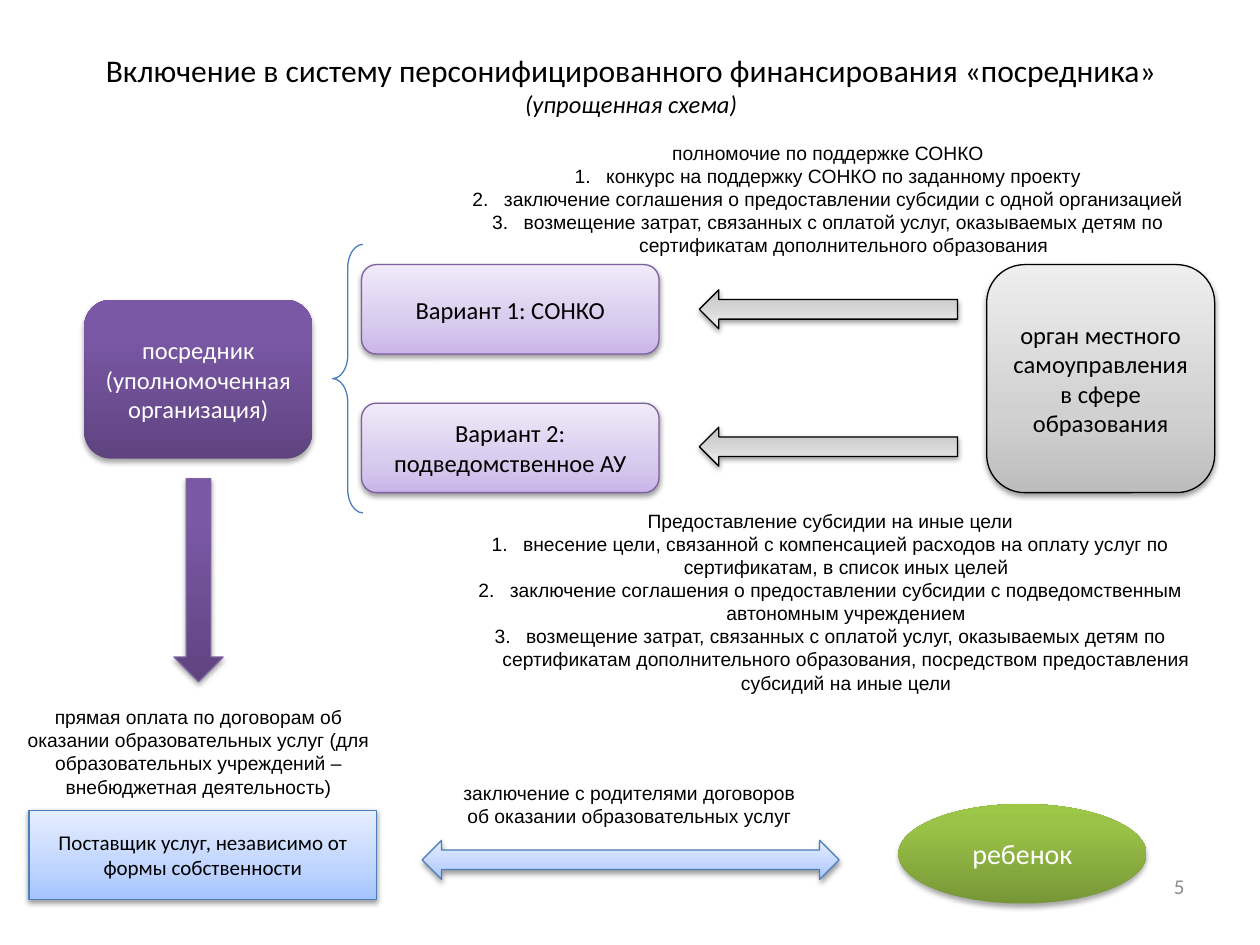
from dataclasses import dataclass
from typing import NamedTuple, Optional

from lxml import etree
from pptx import Presentation
from pptx import util as u
from pptx.dml.color import RGBColor
from pptx.enum import shapes, text
from pptx.oxml.ns import qn

Pt = u.Pt
Kind = shapes.MSO_SHAPE
Align = text.PP_ALIGN
Anchor = text.MSO_ANCHOR


class Shadow(NamedTuple):
    alpha: int
    blur: float
    distance: float


class Style(NamedTuple):
    stops: tuple  # (position %, colour), from bottom to top
    line: Optional[str]
    shadow: Shadow
    ink: str


# Theme: colours, fonts and type sizes
SOFT, STRONG = Shadow(38, 3.1, 1.6), Shadow(35, 3.1, 1.8)


@dataclass(frozen=True)
class Theme:
    head_font: str = "Calibri"
    note_font: str = "Arial"
    black: str = "000000"
    muted: str = "8C8C8C"
    blue_line: str = "4B7EBC"
    title: int = 18
    child: int = 16
    label: int = 14
    small: int = 12
    note: int = 11
    hairline: float = 0.75
    purple: Style = Style(((0, "5F4480"), (80, "7B58A6"), (100, "7C57A8")), None, STRONG, "FFFFFF")
    green: Style = Style(((0, "779737"), (80, "9BC348"), (100, "9DC746")), None, STRONG, "FFFFFF")
    lilac: Style = Style(((0, "C9B5E8"), (35, "D8CBEE"), (100, "F0EAF9")), "7D60A0", SOFT, "000000")
    grey: Style = Style(((0, "BDBDBD"), (35, "D1D1D1"), (100, "EEEEEE")), "000000", SOFT, "000000")
    blue: Style = Style(((0, "A4C4FF"), (35, "BFD4FF"), (100, "E6EEFF")), "4B7EBC", SOFT, "000000")


T = Theme()


class Box(NamedTuple):
    left: float
    top: float
    width: float
    height: float


class Node(NamedTuple):
    kind: Kind
    box: Box
    style: Style
    label: str = ""
    size: int = T.label
    rotation: int = 0


class Note(NamedTuple):
    box: Box
    heading: str
    steps: tuple = ()


def add_run(p, words: str, size: int, font: str, color: str, italic: bool = False) -> None:
    r = p.add_run()
    r.text = words
    r.font.size, r.font.name, r.font.italic = Pt(size), font, italic
    r.font.color.rgb = RGBColor.from_string(color)


def add_color(parent, color: str):
    return etree.SubElement(parent, qn("a:srgbClr"), val=color)


def set_gradient(s, stops: tuple) -> None:
    s.fill.gradient()
    s.fill.gradient_angle = 90
    stop_list = s._element.spPr.find(".//" + qn("a:gsLst"))
    for old in list(stop_list):
        stop_list.remove(old)
    for position, color in stops:
        add_color(etree.SubElement(stop_list, qn("a:gs"), pos=str(position * 1000)), color)


def set_shadow(s, shadow: Shadow) -> None:
    s.shadow.inherit = False
    effects = s._element.spPr.find(qn("a:effectLst"))
    outer = etree.SubElement(effects, qn("a:outerShdw"), blurRad=str(Pt(shadow.blur)),
                             dist=str(Pt(shadow.distance)), dir="5400000", rotWithShape="0")
    etree.SubElement(add_color(outer, T.black), qn("a:alpha"), val=str(shadow.alpha * 1000))


def set_line(s, color: Optional[str]) -> None:
    if color is None:
        s.line.fill.background()
    else:
        s.line.color.rgb = RGBColor.from_string(color)
        s.line.width = Pt(T.hairline)


def add_node(sl, node: Node) -> None:
    s = sl.shapes.add_shape(node.kind, *map(Pt, node.box))
    s.rotation = node.rotation
    set_gradient(s, node.style.stops)
    set_line(s, node.style.line)
    set_shadow(s, node.style.shadow)
    if node.label:
        tf = s.text_frame
        tf.word_wrap, tf.vertical_anchor = True, Anchor.MIDDLE
        p = tf.paragraphs[0]
        p.alignment = Align.CENTER
        add_run(p, node.label, node.size, T.head_font, node.style.ink)


def add_brace(sl, box: Box) -> None:
    s = sl.shapes.add_shape(Kind.LEFT_BRACE, *map(Pt, box))
    s.adjustments[0], s.adjustments[1] = 0.78, 0.5
    s.fill.background()
    set_line(s, T.blue_line)
    s.shadow.inherit = False


def add_text_frame(sl, box: Box, anchor: Anchor):
    tf = sl.shapes.add_textbox(*map(Pt, box)).text_frame
    tf.word_wrap, tf.vertical_anchor = True, anchor
    return tf


def add_note(sl, note: Note) -> None:
    tf = add_text_frame(sl, note.box, Anchor.TOP)
    tf.auto_size = text.MSO_AUTO_SIZE.SHAPE_TO_FIT_TEXT
    for i, words in enumerate((note.heading, *note.steps)):
        p = tf.add_paragraph() if i else tf.paragraphs[0]
        p.alignment = Align.CENTER
        add_run(p, words, T.note, T.note_font, T.black)
        if i:  # numbered step with a hanging indent
            pr = p._p.get_or_add_pPr()
            pr.set("marL", str(Pt(18)))
            pr.set("indent", str(-Pt(18)))
            etree.SubElement(pr, qn("a:buFont"), typeface="+mj-lt")
            etree.SubElement(pr, qn("a:buAutoNum"), type="arabicPeriod")


# Rows shared by each option and its funding arrow
OPTION_TOP, OPTION_STEP = 151.2, 79.2
ARROW_TOP, ARROW_STEP = 165.6, 78.5
OPTIONS = ("Вариант 1: СОНКО", "Вариант 2: подведомственное АУ")

NODES = [
    Node(Kind.ROUNDED_RECTANGLE, Box(48.2, 171.4, 130.3, 90.7), T.purple,
         "посредник (уполномоченная организация)"),
    Node(Kind.ROUNDED_RECTANGLE, Box(563.8, 151.2, 130.3, 130.3), T.grey,
         "орган местного самоуправления в сфере образования"),
    Node(Kind.DOWN_ARROW, Box(99.4, 273.6, 28.1, 115.9), T.purple._replace(line="7D60A0")),
    Node(Kind.RECTANGLE, Box(16.6, 463, 198.7, 51.1), T.blue,
         "Поставщик услуг, независимо от формы собственности", T.small),
    Node(Kind.LEFT_RIGHT_ARROW, Box(241.2, 480.2, 238.3, 22.3), T.blue),
    Node(Kind.OVAL, Box(513.4, 459.4, 141.8, 56.9), T.green, "ребенок", T.child),
]
for row, option in enumerate(OPTIONS):
    NODES += [
        Node(Kind.ROUNDED_RECTANGLE, Box(206.6, OPTION_TOP + row * OPTION_STEP, 170, 51.1),
             T.lilac, option),
        Node(Kind.RIGHT_ARROW, Box(399.6, ARROW_TOP + row * ARROW_STEP, 147.6, 22.3),
             T.grey, rotation=180),
    ]

NOTES = [
    Note(Box(257.8, 77, 430.6, 74.2), "полномочие по поддержке СОНКО", (
        "конкурс на поддержку СОНКО по заданному проекту",
        "заключение соглашения о предоставлении субсидии с одной организацией",
        "возмещение затрат, связанных с оплатой услуг, оказываемых детям по "
        "сертификатам дополнительного образования")),
    Note(Box(259.2, 287.3, 430.6, 113.8), "Предоставление субсидии на иные цели", (
        "внесение цели, связанной с компенсацией расходов на оплату услуг по "
        "сертификатам, в список иных целей",
        "заключение соглашения о предоставлении субсидии с подведомственным "
        "автономным учреждением",
        "возмещение затрат, связанных с оплатой услуг, оказываемых детям по сертификатам "
        "дополнительного образования, посредством предоставления субсидий на иные цели")),
    Note(Box(5.8, 399.6, 215.3, 60.5), "прямая оплата по договорам об оказании образовательных "
         "услуг (для образовательных учреждений – внебюджетная деятельность)"),
    Note(Box(252, 442.8, 215.3, 33.8),
         "заключение с родителями договоров об оказании образовательных услуг"),
]


def main() -> None:
    prs = Presentation()
    prs.slide_width, prs.slide_height = Pt(720), Pt(540)
    sl = prs.slides.add_slide(prs.slide_layouts[6])

    # Title and page number
    p = add_text_frame(sl, Box(36.7, 3.6, 648, 90), Anchor.MIDDLE).paragraphs[0]
    p.alignment = Align.CENTER
    add_run(p, "Включение в систему персонифицированного финансирования «посредника» ",
            T.title, T.head_font, T.black)
    add_run(p, "(упрощенная схема)", T.label, T.head_font, T.black, italic=True)
    p = add_text_frame(sl, Box(516.2, 491.8, 167.8, 28.8), Anchor.MIDDLE).paragraphs[0]
    p.alignment = Align.RIGHT
    add_run(p, "5", T.small, T.head_font, T.muted)

    # Scheme
    add_brace(sl, Box(190.1, 139.7, 17.3, 153.4))
    for node in NODES:
        add_node(sl, node)
    for note in NOTES:
        add_note(sl, note)

    prs.save("out.pptx")


if __name__ == "__main__":
    main()
